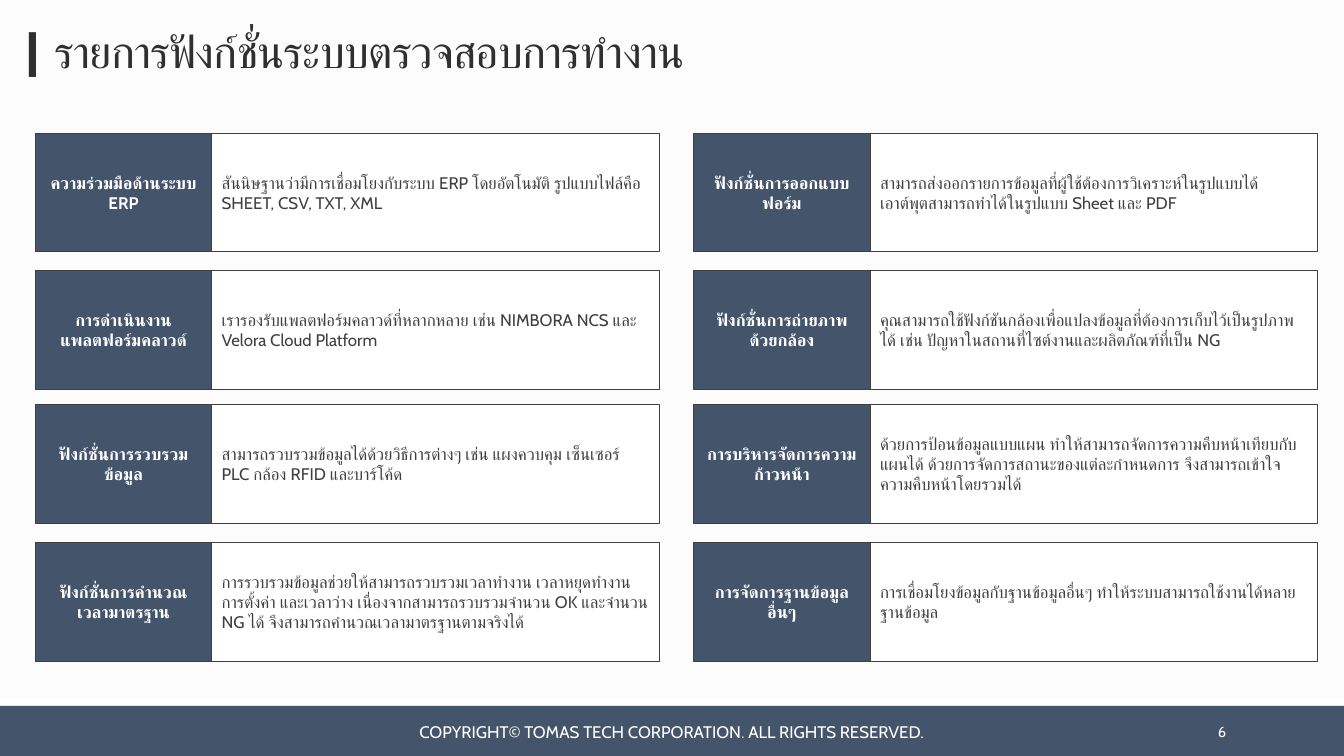
from pptx import Presentation
from pptx.dml.color import RGBColor
from pptx.enum.lang import MSO_LANGUAGE_ID as Lang
from pptx.enum.shapes import MSO_SHAPE as Shape
from pptx.enum.text import MSO_ANCHOR as Anchor, MSO_AUTO_SIZE as AutoSize, PP_ALIGN as Align
from pptx.util import Inches, Pt

COLORS = {"paper": "FCFCFC", "navy": "44546A", "white": "FFFFFF",
          "title": "2F2F2F", "ink": "3F3F3F"}
WIDTH, HEIGHT = 13.33, 7.5


def add_box(left, top, width, height, fill, outlined=False):
    box = slide.shapes.add_shape(Shape.RECTANGLE, Inches(left), Inches(top),
                                 Inches(width), Inches(height))
    box.shadow.inherit = False
    box.fill.solid()
    box.fill.fore_color.rgb = RGBColor.from_string(COLORS[fill])
    if outlined:
        box.line.color.rgb = RGBColor.from_string(COLORS["ink"])
        box.line.width = Pt(0.75)
    else:
        box.line.fill.background()
    return box


def write(holder, text, size, color, align=Align.LEFT, anchor=Anchor.MIDDLE, bold=False):
    frame = holder.text_frame
    frame.word_wrap = True
    frame.auto_size = AutoSize.NONE
    frame.vertical_anchor = anchor
    paragraph = frame.paragraphs[0]
    paragraph.alignment = align
    run = paragraph.add_run()
    run.text = text
    run.font.name = "Cabin"
    run.font.size = Pt(size)
    run.font.bold = bold
    run.font.language_id = Lang.THAI
    run.font.color.rgb = RGBColor.from_string(COLORS[color])
    return paragraph


prs = Presentation()
prs.slide_width, prs.slide_height = Inches(WIDTH), Inches(HEIGHT)
slide = prs.slides.add_slide(prs.slide_layouts[5])
slide.background.fill.solid()
slide.background.fill.fore_color.rgb = RGBColor.from_string(COLORS["paper"])

# Footer band with copyright line and page number
add_box(0, 7, WIDTH, 0.5, "navy")
add_box(0, 6.93, WIDTH, 0.07, "white")
footer_texts = [
    (4.03, 5.27, "COPYRIGHT© TOMAS TECH CORPORATION. ALL RIGHTS RESERVED.", 12, Align.CENTER),
    (10.83, 1.43, "6", 10.5, Align.RIGHT),
]
for left, width, text, size, align in footer_texts:
    footer = slide.shapes.add_textbox(Inches(left), Inches(7.06), Inches(width), Inches(0.4))
    write(footer, text, size, "white", align)

# Title
title = slide.shapes.title
title.left, title.top = Inches(0), Inches(0.09)
title.width, title.height = Inches(WIDTH), Inches(0.73)
heading = write(title, "┃รายการฟังก์ชั่นระบบตรวจสอบการทำงาน", 32, "title", anchor=Anchor.BOTTOM)
heading.line_spacing = 0.85
heading.runs[0].font._element.set("spc", "-50")

# Function cards: each row holds a left and a right card of (name, description)
functions = [
    [("ความร่วมมือด้านระบบ ERP",
      "สันนิษฐานว่ามีการเชื่อมโยงกับระบบ ERP โดยอัตโนมัติ รูปแบบไฟล์คือ SHEET, CSV, TXT, XML"),
     ("ฟังก์ชั่นการออกแบบฟอร์ม",
      "สามารถส่งออกรายการข้อมูลที่ผู้ใช้ต้องการวิเคราะห์ในรูปแบบได้ "
      "เอาต์พุตสามารถทำได้ในรูปแบบ Sheet และ PDF")],
    [("การดำเนินงานแพลตฟอร์มคลาวด์",
      "เรารองรับแพลตฟอร์มคลาวด์ที่หลากหลาย เช่น NIMBORA NCS และ Velora Cloud Platform"),
     ("ฟังก์ชั่นการถ่ายภาพด้วยกล้อง",
      "คุณสามารถใช้ฟังก์ชันกล้องเพื่อแปลงข้อมูลที่ต้องการเก็บไว้เป็นรูปภาพได้ "
      "เช่น ปัญหาในสถานที่ไซต์งานและผลิตภัณฑ์ที่เป็น NG")],
    [("ฟังก์ชั่นการรวบรวมข้อมูล",
      "สามารถรวบรวมข้อมูลได้ด้วยวิธีการต่างๆ เช่น แผงควบคุม เซ็นเซอร์ PLC กล้อง RFID และบาร์โค้ด"),
     ("การบริหารจัดการความก้าวหน้า",
      "ด้วยการป้อนข้อมูลแบบแผน ทำให้สามารถจัดการความคืบหน้าเทียบกับแผนได้ "
      "ด้วยการจัดการสถานะของแต่ละกำหนดการ จึงสามารถเข้าใจความคืบหน้าโดยรวมได้")],
    [("ฟังก์ชั่นการคำนวณเวลามาตรฐาน",
      "การรวบรวมข้อมูลช่วยให้สามารถรวบรวมเวลาทำงาน เวลาหยุดทำงาน การตั้งค่า และเวลาว่าง "
      "เนื่องจากสามารถรวบรวมจำนวน OK และจำนวน NG ได้ จึงสามารถคำนวณเวลามาตรฐานตามจริงได้"),
     ("การจัดการฐานข้อมูลอื่นๆ",
      "การเชื่อมโยงข้อมูลกับฐานข้อมูลอื่นๆ ทำให้ระบบสามารถใช้งานได้หลายฐานข้อมูล")],
]
ROW_TOPS = [1.32, 2.68, 4.01, 5.38]
COLUMN_LEFTS = [0.35, 6.88]
NAME_WIDTH, DESCRIPTION_WIDTH, CARD_HEIGHT = 1.75, 4.44, 1.18

for top, row in zip(ROW_TOPS, functions):
    for left, (name, description) in zip(COLUMN_LEFTS, row):
        description_box = add_box(left + NAME_WIDTH, top, DESCRIPTION_WIDTH, CARD_HEIGHT,
                                  "white", outlined=True)
        write(description_box, description, 12, "ink")
        name_box = add_box(left, top, NAME_WIDTH, CARD_HEIGHT, "navy", outlined=True)
        write(name_box, name, 12, "white", Align.CENTER, bold=True)

prs.save("out.pptx")
